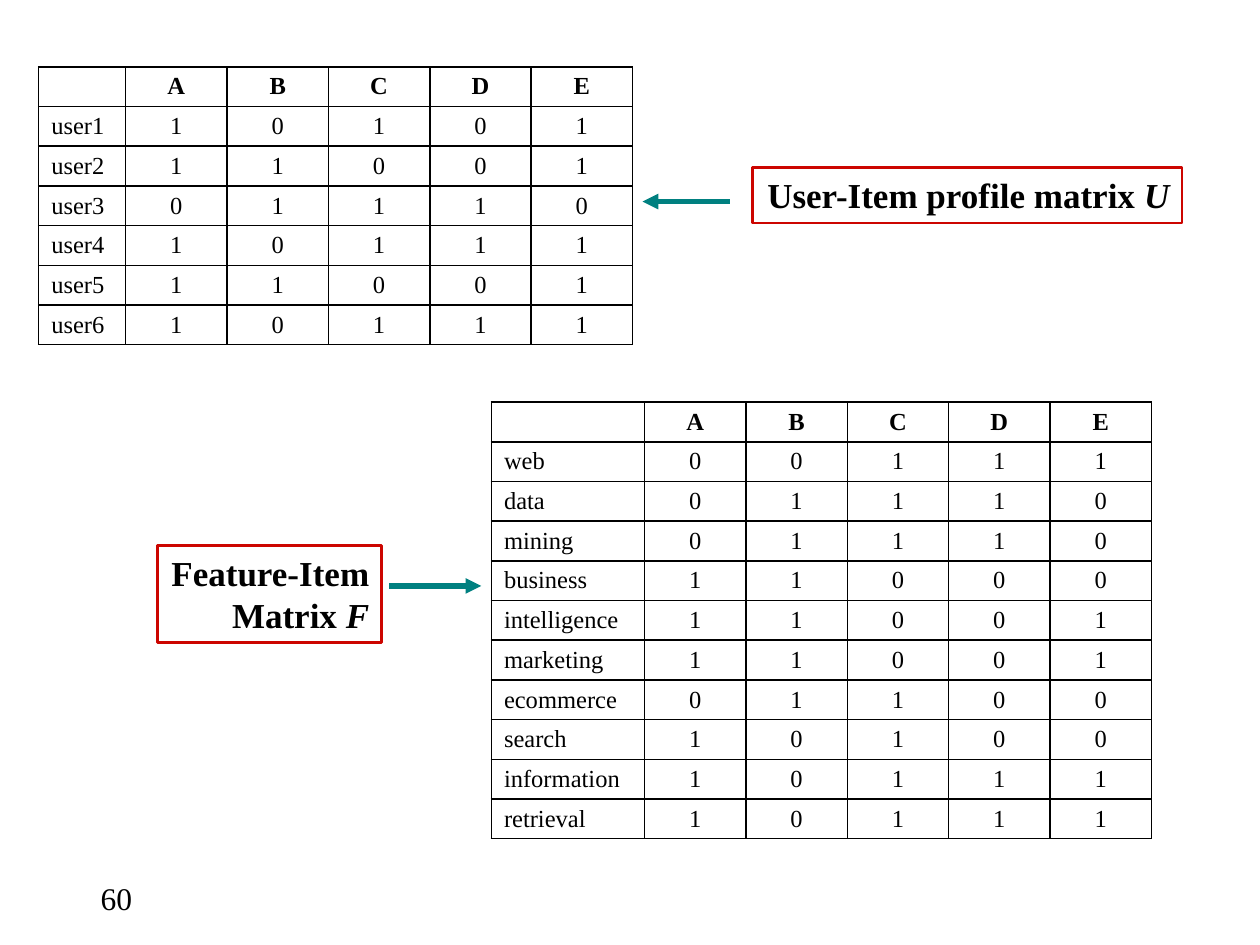
from dataclasses import dataclass

from lxml import etree
from pptx import Presentation
from pptx import util as u
from pptx.dml.color import RGBColor
from pptx.enum import shapes, text
from pptx.oxml.ns import qn

FONT, BLACK, RED, TEAL = "Times New Roman", "000000", "CC0500", "008080"
WIDTH, HEIGHT = u.Inches(10), u.Inches(7.5)
ITEMS = "ABCDE"
ITEM_COL, ROW = 8.05, 4.2  # percent of slide width and height


@dataclass
class Matrix:
    left: float
    top: float
    label_col: float
    rows: dict[str, str]  # label -> one digit per item


@dataclass
class Label:
    left: float
    top: float
    width: float
    height: float
    lines: list[tuple[str, str]]  # bold part, bold italic part


@dataclass
class Arrow:
    start: float
    end: float
    y: float


MATRICES = [
    Matrix(3.07, 7.07, 6.9, {
        "user1": "10101", "user2": "11001", "user3": "01110",
        "user4": "10111", "user5": "11001", "user6": "10111"}),
    Matrix(39, 42.55, 12.15, {
        "web": "00111", "data": "01110", "mining": "01110",
        "business": "11000", "intelligence": "11001",
        "marketing": "11001", "ecommerce": "01100", "search": "10100",
        "information": "10111", "retrieval": "10111"}),
]
LABELS = [
    Label(59.7, 17.73, 34.1, 5.87, [("User-Item profile matrix ", "U")]),
    Label(12.5, 57.73, 17.8, 10.27, [("Feature-Item", ""), ("Matrix ", "F")]),
]
ARROWS = [Arrow(57.9, 51, 21.33), Arrow(30.9, 38.2, 62)]


def x(percent: float) -> int:
    return round(WIDTH * percent / 100)


def y(percent: float) -> int:
    return round(HEIGHT * percent / 100)


def rgb(value: str) -> RGBColor:
    return RGBColor.from_string(value)


def style(p, size: float, bold: bool = False, align=text.PP_ALIGN.LEFT) -> None:
    p.alignment = align
    p.font.name, p.font.size, p.font.bold = FONT, u.Pt(size), bold
    p.font.color.rgb = rgb(BLACK)


def add_borders(cell) -> None:
    tc_pr = cell._tc.get_or_add_tcPr()
    for side in ("a:lnL", "a:lnR", "a:lnT", "a:lnB"):
        ln = etree.SubElement(tc_pr, qn(side), w=str(u.Pt(1)))
        fill = etree.SubElement(ln, qn("a:solidFill"))
        etree.SubElement(fill, qn("a:srgbClr"), val=BLACK)


def draw_matrix(s, m: Matrix) -> None:
    grid = [["", *ITEMS]] + [[name, *bits] for name, bits in m.rows.items()]
    widths = [m.label_col] + [ITEM_COL] * len(ITEMS)
    table = s.shapes.add_table(len(grid), len(widths), x(m.left), y(m.top),
                               x(sum(widths)), y(ROW * len(grid))).table
    table.first_row = table.horz_banding = False
    for column, width in zip(table.columns, widths):
        column.width = x(width)
    for i, values in enumerate(grid):
        table.rows[i].height = y(ROW)
        for j, value in enumerate(values):
            cell = table.cell(i, j)
            cell.text = value
            cell.margin_top = cell.margin_bottom = 0
            cell.vertical_anchor = text.MSO_ANCHOR.MIDDLE
            add_borders(cell)
            cell.fill.background()
            align = text.PP_ALIGN.CENTER if j else text.PP_ALIGN.JUSTIFY
            style(cell.text_frame.paragraphs[0], 14, i == 0, align)


def draw_label(s, label: Label) -> None:
    sp = s.shapes.add_shape(shapes.MSO_SHAPE.RECTANGLE, x(label.left),
                            y(label.top), x(label.width), y(label.height))
    sp.shadow.inherit = False
    sp.fill.background()
    sp.line.color.rgb, sp.line.width = rgb(RED), u.Pt(1.5)
    tf = sp.text_frame
    tf.word_wrap = False
    tf.auto_size = text.MSO_AUTO_SIZE.SHAPE_TO_FIT_TEXT
    tf.vertical_anchor = text.MSO_ANCHOR.TOP
    for i, (plain, italic) in enumerate(label.lines):
        p = tf.add_paragraph() if i else tf.paragraphs[0]
        style(p, 20, True, text.PP_ALIGN.RIGHT)
        p.add_run().text = plain
        if italic:
            r = p.add_run()
            r.text, r.font.italic = italic, True


def draw_arrow(s, arrow: Arrow) -> None:
    sp = s.shapes.add_connector(shapes.MSO_CONNECTOR.STRAIGHT, x(arrow.start),
                                y(arrow.y), x(arrow.end), y(arrow.y))
    sp.line.color.rgb, sp.line.width = rgb(TEAL), u.Pt(3)
    etree.SubElement(sp.line._get_or_add_ln(), qn("a:tailEnd"), type="triangle")
    etree.SubElement(sp._element.spPr, qn("a:effectLst"))


def draw_page_number(s, number: str) -> None:
    tf = s.shapes.add_textbox(x(7), y(92.4), x(37.5), y(3.33)).text_frame
    tf.word_wrap = True
    tf.text = number
    style(tf.paragraphs[0], 18)


def main() -> None:
    prs = Presentation()
    prs.slide_width, prs.slide_height = WIDTH, HEIGHT
    s = prs.slides.add_slide(prs.slide_layouts[6])
    draw_page_number(s, "60")
    # Profile matrices
    for matrix in MATRICES:
        draw_matrix(s, matrix)
    # Captions and the arrows that lead to the matrices
    for label, arrow in zip(LABELS, ARROWS):
        draw_label(s, label)
        draw_arrow(s, arrow)
    prs.save("out.pptx")


if __name__ == "__main__":
    main()
